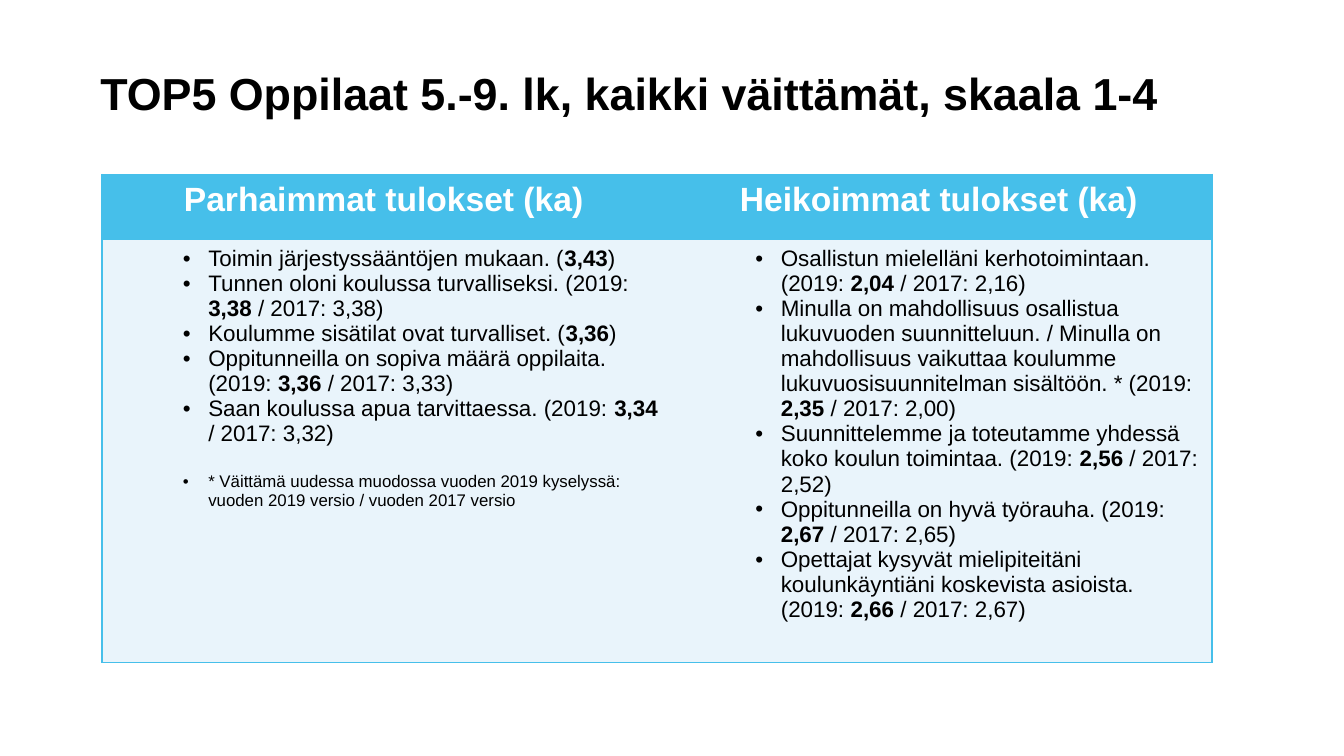
from lxml.etree import SubElement
from pptx import Presentation
from pptx.dml.color import RGBColor
from pptx.enum.text import MSO_ANCHOR, PP_ALIGN
from pptx.oxml.ns import qn
from pptx.util import Inches, Pt

FONT = "Arial"
BLACK = RGBColor(0x00, 0x00, 0x00)
WHITE = RGBColor(0xFF, 0xFF, 0xFF)
BLUE = RGBColor(0x46, 0xBF, 0xEA)
PALE = RGBColor(0xE9, 0xF4, 0xFB)
NO_STYLE = "{2D5ABB26-0587-4C30-8999-92F81FD0307C}"

COLS = (4.26, 4)
ROWS = (0.48, 3.15)
HEADERS = ("Parhaimmat tulokset (ka) ", "Heikoimmat tulokset (ka) ")
# Text between double asterisks is bold.
BEST = (
    "Toimin järjestyssääntöjen mukaan. (**3,43**)",
    "Tunnen oloni koulussa turvalliseksi. (2019: **3,38** / 2017: 3,38)",
    "Koulumme sisätilat ovat turvalliset. (**3,36**)",
    "Oppitunneilla on sopiva määrä oppilaita. (2019: **3,36** / 2017: 3,33)",
    "Saan koulussa apua tarvittaessa. (2019: **3,34** / 2017: 3,32)",
)
NOTE = ("* Väittämä uudessa muodossa vuoden 2019 kyselyssä: "
        "vuoden 2019 versio / vuoden 2017 versio")
WEAKEST = (
    "Osallistun mielelläni kerhotoimintaan. (2019: **2,04** / 2017: 2,16)",
    "Minulla on mahdollisuus osallistua lukuvuoden suunnitteluun. / "
    "Minulla on mahdollisuus vaikuttaa koulumme lukuvuosisuunnitelman "
    "sisältöön. * (2019: **2,35** / 2017: 2,00)",
    "Suunnittelemme ja toteutamme yhdessä koko koulun toimintaa. "
    "(2019: **2,56** / 2017: 2,52)",
    "Oppitunneilla on hyvä työrauha. (2019: **2,67** / 2017: 2,65)",
    "Opettajat kysyvät mielipiteitäni koulunkäyntiäni koskevista asioista. "
    "(2019: **2,66** / 2017: 2,67)",
)


def add_text(tf, text, size=12, color=BLACK, bold=False, align=None,
             bullet=False, before=0, spacing=None):
    """Add a paragraph, using the first one while it is still empty."""
    p = tf.paragraphs[-1]
    if p.runs:
        p = tf.add_paragraph()
    p.alignment = align
    p.space_before = Pt(before)
    p.line_spacing = spacing
    if bullet:
        set_bullet(p)
    for i, part in enumerate(text.split("**")):
        r = p.add_run()
        r.text = part
        r.font.name = FONT
        r.font.size = Pt(size)
        r.font.bold = bold or i % 2 == 1
        r.font.color.rgb = color


def set_bullet(p):
    p.level = 1
    pPr = p._p.get_or_add_pPr()
    pPr.set("marL", str(Inches(0.69)))
    pPr.set("indent", str(Inches(-0.19)))
    SubElement(pPr, qn("a:buFont"), typeface=FONT)
    SubElement(pPr, qn("a:buChar"), char="•")


def set_borders(cell, sides):
    """Draw the given sides (letters of LRTB, in that order)."""
    tcPr = cell._tc.get_or_add_tcPr()
    for i, side in enumerate(sides):
        ln = SubElement(tcPr, qn(f"a:ln{side}"), w=str(Pt(1)))
        fill = SubElement(ln, qn("a:solidFill"))
        SubElement(fill, qn("a:srgbClr"), val=str(BLUE))
        tcPr.insert(i, ln)


def add_title(s, text):
    sp = s.shapes.add_textbox(Inches(0.59), Inches(0.15), Inches(8.28), Inches(0.74))
    tf = sp.text_frame
    tf.word_wrap = True
    tf.vertical_anchor = MSO_ANCHOR.BOTTOM
    tf.margin_left = tf.margin_top = tf.margin_bottom = 0
    tf.margin_right = Inches(0.1)
    add_text(tf, text, size=24, bold=True, align=PP_ALIGN.CENTER, spacing=Pt(33))


def add_result_table(s):
    frame = s.shapes.add_table(len(ROWS), len(COLS), Inches(0.76), Inches(1.3),
                               Inches(sum(COLS)), Inches(sum(ROWS)))
    table = frame.table
    table._tbl.tblPr.find(qn("a:tableStyleId")).text = NO_STYLE
    table.first_row = table.horz_banding = False
    for row, height in zip(table.rows, ROWS):
        row.height = Inches(height)
    for c, (width, header, items) in enumerate(zip(COLS, HEADERS, (BEST, WEAKEST))):
        table.columns[c].width = Inches(width)
        head, body = table.cell(0, c), table.cell(1, c)
        for cell, color in ((head, BLUE), (body, PALE)):
            cell.fill.solid()
            cell.fill.fore_color.rgb = color
            set_borders(cell, "LR"[c] + "TB")
        add_text(head.text_frame, header, size=18, color=WHITE, bold=True,
                 align=PP_ALIGN.CENTER)
        for item in items:
            add_text(body.text_frame, item, bullet=True)
    add_text(table.cell(1, 0).text_frame, NOTE, size=9, bullet=True, before=14)


def main():
    prs = Presentation()
    prs.slide_width = Inches(10)
    prs.slide_height = prs.slide_width * 9 // 16
    s = prs.slides.add_slide(prs.slide_layouts[6])
    add_title(s, "TOP5 Oppilaat 5.-9. lk, kaikki väittämät, skaala 1-4")
    add_result_table(s)
    prs.save("out.pptx")


if __name__ == "__main__":
    main()
